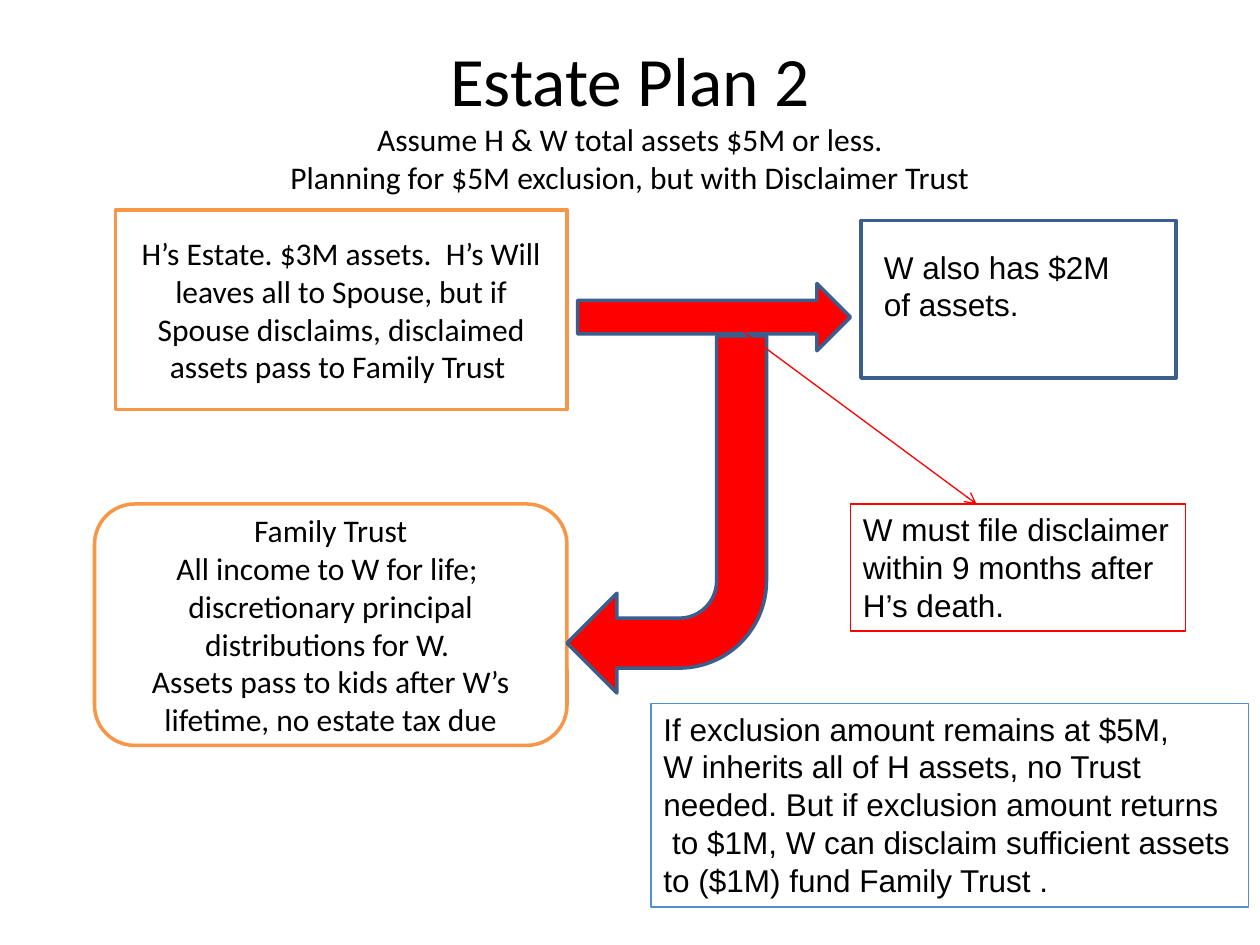
from lxml.etree import SubElement
from pptx import Presentation
from pptx.dml.color import RGBColor
from pptx.enum.shapes import MSO_CONNECTOR, MSO_SHAPE
from pptx.enum.text import MSO_ANCHOR, MSO_AUTO_SIZE, PP_ALIGN
from pptx.oxml.ns import qn
from pptx.util import Inches, Pt

UNITS_PER_INCH = 12  # the layout grid has twelve steps to the inch
BLACK, WHITE, RED = "000000", "FFFFFF", "FF0000"
ORANGE, NAVY, BLUE = "F79646", "3A5F8C", "558ED5"


def grid(*steps):
    return [Inches(step / UNITS_PER_INCH) for step in steps]


def color(hex_text):
    return RGBColor.from_string(hex_text)


def write(shape, lines, font="Calibri", sizes=(18,), align=PP_ALIGN.CENTER,
          anchor=MSO_ANCHOR.MIDDLE, wrap=True, grow=False):
    """Write one paragraph per line; the last size serves all further lines."""
    frame = shape.text_frame
    frame.word_wrap = wrap
    frame.vertical_anchor = anchor
    frame.auto_size = (MSO_AUTO_SIZE.SHAPE_TO_FIT_TEXT if grow
                       else MSO_AUTO_SIZE.NONE)
    for index, line in enumerate(lines):
        paragraph = frame.add_paragraph() if index else frame.paragraphs[0]
        paragraph.alignment = align
        run = paragraph.add_run()
        run.text = line
        run.font.name = font
        run.font.size = Pt(sizes[min(index, len(sizes) - 1)])
        run.font.color.rgb = color(BLACK)


def add_block(slide, kind, box, line, fill=None, width=2):
    block = slide.shapes.add_shape(kind, *grid(*box))
    block.shadow.inherit = False
    if fill:
        block.fill.solid()
        block.fill.fore_color.rgb = color(fill)
    else:
        block.fill.background()
    block.line.color.rgb = color(line)
    block.line.width = Pt(width)
    return block


def add_heading(slide, box, lines):
    heading = slide.shapes.add_textbox(*grid(*box))
    write(heading, lines, sizes=(39.6, 18))


def add_holder(slide, kind, box, lines):
    """Add an orange box that holds the estate or the trust."""
    write(add_block(slide, kind, box, ORANGE, WHITE), lines)


def write_note(shape, lines):
    write(shape, lines, font="Arial", align=PP_ALIGN.LEFT,
          anchor=MSO_ANCHOR.TOP, wrap=False, grow=True)


def add_note(slide, box, lines, line):
    write_note(add_block(slide, MSO_SHAPE.RECTANGLE, box, line, width=0.75),
               lines)


def add_transfer(slide, kind, box, rotation=0):
    transfer = add_block(slide, kind, box, NAVY, RED)
    transfer.rotation = rotation


def add_pointer(slide, start, end):
    pointer = slide.shapes.add_connector(
        MSO_CONNECTOR.STRAIGHT, *grid(*start, *end))
    pointer.line.color.rgb = color(RED)
    pointer.line.width = Pt(0.75)
    line = pointer.line._get_or_add_ln()
    SubElement(line, qn("a:tailEnd"), type="arrow")
    SubElement(pointer._element.spPr, qn("a:effectLst"))


def main():
    deck = Presentation()
    deck.slide_width, deck.slide_height = Inches(10), Inches(7.5)
    slide = deck.slides.add_slide(deck.slide_layouts[6])

    add_heading(slide, (6, 3.6, 108, 15), [
        "Estate Plan 2",
        "Assume H & W total assets $5M or less.",
        "Planning for $5M exclusion, but with Disclaimer Trust",
    ])
    add_holder(slide, MSO_SHAPE.RECTANGLE, (11, 20, 43, 19), [
        "H’s Estate. $3M assets.  H’s Will leaves all to Spouse, but if "
        "Spouse disclaims, disclaimed assets pass to Family Trust ",
    ])
    add_holder(slide, MSO_SHAPE.ROUNDED_RECTANGLE, (9, 48, 45, 23), [
        "Family Trust",
        "All income to W for life; ",
        "discretionary principal",
        "distributions for W. ",
        "Assets pass to kids after W’s",
        "lifetime, no estate tax due",
    ])
    add_block(slide, MSO_SHAPE.RECTANGLE, (82, 21, 30, 15), NAVY)
    add_note(slide, (62, 67, 56.9, 19.4), [
        "If exclusion amount remains at $5M,",
        "W inherits all of H assets, no Trust",
        "needed. But if exclusion amount returns",
        " to $1M, W can disclaim sufficient assets",
        "to ($1M) fund Family Trust .",
    ], BLUE)
    add_transfer(slide, MSO_SHAPE.RIGHT_ARROW, (55, 27, 26, 6.4))
    add_transfer(slide, MSO_SHAPE.BENT_ARROW, (54, 32, 19, 34), rotation=180)
    spouse_assets = slide.shapes.add_textbox(*grid(83, 23, 24.1, 8.5))
    write_note(spouse_assets, ["W also has $2M", "of assets."])
    add_note(slide, (81, 48, 31.9, 12.1), [
        "W must file disclaimer",
        "within 9 months after",
        "H’s death.",
    ], RED)
    add_pointer(slide, (70, 31), (93, 48))

    deck.save("out.pptx")


if __name__ == "__main__":
    main()
